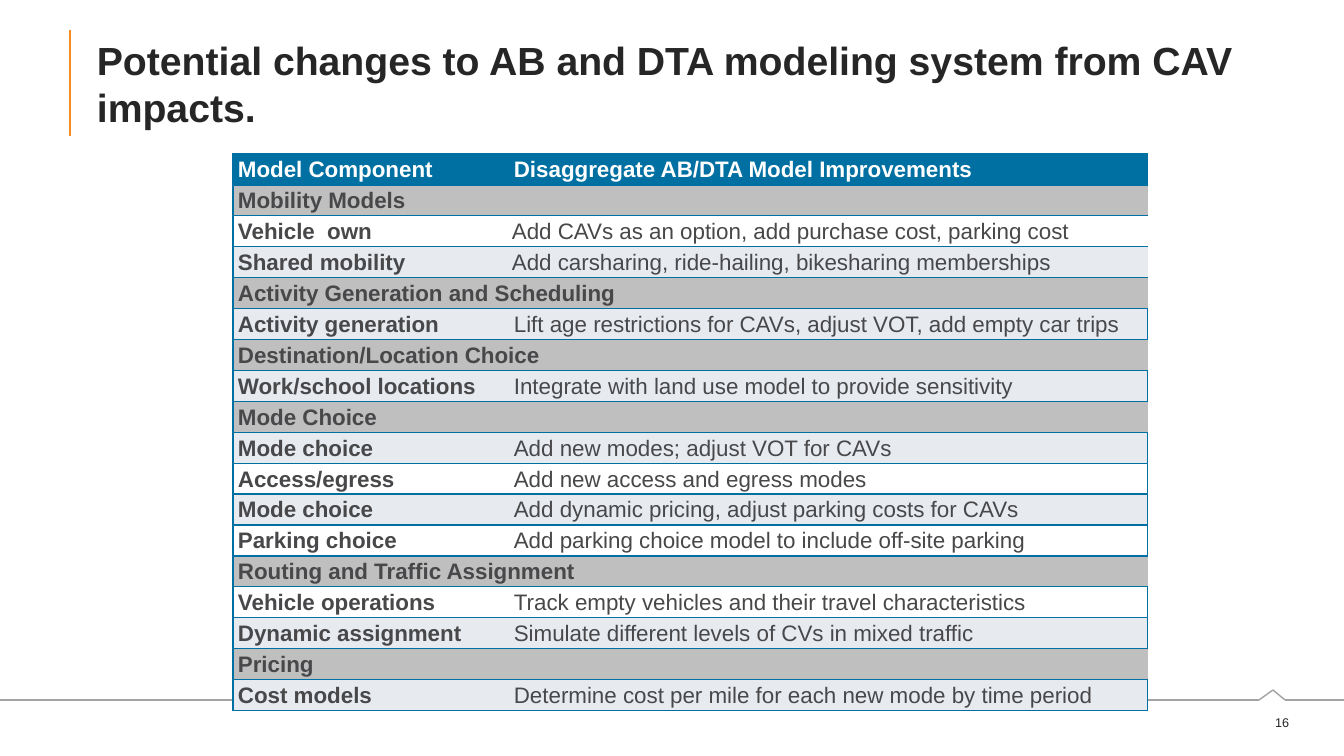
import pptx
import pptx.util
import pptx.dml.color
import pptx.enum.shapes
import pptx.enum.text
import pptx.oxml.ns
from lxml import etree

Pt = pptx.util.Pt
RGB = pptx.dml.color.RGBColor
Anchor = pptx.enum.text.MSO_ANCHOR
Align = pptx.enum.text.PP_ALIGN
qn = pptx.oxml.ns.qn

PX = 914400 / 100.8
ORANGE = RGB(0xF6, 0x8B, 0x1F)
RULE = RGB(0xA3, 0xA3, 0xA5)
DARK = RGB(0x26, 0x26, 0x26)
TEXT = RGB(0x48, 0x48, 0x4A)
BLUE = RGB(0x00, 0x6F, 0xA1)
GREY = RGB(0xBF, 0xBF, 0xBF)
PALE = RGB(0xE7, 0xEB, 0xF0)
WHITE = RGB(0xFF, 0xFF, 0xFF)


def px(*values):
    """Turn pixel lengths into a list of EMU."""
    return [round(v * PX) for v in values]


def style(para, text, size, color, bold):
    run = para.add_run()
    run.text = text
    for key, value in {"name": "Arial", "size": Pt(size), "bold": bold}.items():
        setattr(run.font, key, value)
    run.font.color.rgb = color


deck = pptx.Presentation()
deck.slide_width, deck.slide_height = px(1344, 756)
slide = deck.slides.add_slide(deck.slide_layouts[6])
shapes = slide.shapes

# Title bar and footer rule with its peak
lines = [((70, 30), (70, 136), ORANGE, 1.5)]
peak = [(0, 700), (1259, 700), (1273, 690), (1285, 700), (1344, 700)]
lines += [(a, b, RULE, 1) for a, b in zip(peak, peak[1:])]
for start, end, color, width in lines:
    line = shapes.add_connector(
        pptx.enum.shapes.MSO_CONNECTOR.STRAIGHT, *px(*start, *end))
    line.line.color.rgb = color
    line.line.width = Pt(width)
    etree.SubElement(line._element.spPr, qn("a:effectLst"))

# Title and page number
title = "Potential changes to AB and DTA modeling system from CAV impacts."
for text, place, size, bold, align in [
    (title, (87, 30, 1189, 106), 28, True, Align.LEFT),
    ("16", (1243, 710, 56, 25), 9, False, Align.RIGHT),
]:
    frame = shapes.add_textbox(*px(*place)).text_frame
    frame.word_wrap = True
    frame.vertical_anchor = Anchor.MIDDLE
    para = frame.paragraphs[0]
    para.alignment = align
    style(para, text, size, DARK, bold)

# Each row: fill, label, improvement; a section row has no improvement
rows = [
    (BLUE, "Model Component", "Disaggregate AB/DTA Model Improvements"),
    (GREY, "Mobility Models", ""),
    (WHITE, "Vehicle  own",
     "Add CAVs as an option, add purchase cost, parking cost"),
    (PALE, "Shared mobility",
     "Add carsharing, ride-hailing, bikesharing memberships"),
    (GREY, "Activity Generation and Scheduling", ""),
    (PALE, "Activity generation",
     "Lift age restrictions for CAVs, adjust VOT, add empty car trips"),
    (GREY, "Destination/Location Choice", ""),
    (PALE, "Work/school locations",
     "Integrate with land use model to provide sensitivity"),
    (GREY, "Mode Choice", ""),
    (PALE, "Mode choice", "Add new modes; adjust VOT for CAVs"),
    (WHITE, "Access/egress", "Add new access and egress modes"),
    (PALE, "Mode choice", "Add dynamic pricing, adjust parking costs for CAVs"),
    (WHITE, "Parking choice",
     "Add parking choice model to include off-site parking"),
    (GREY, "Routing and Traffic Assignment", ""),
    (WHITE, "Vehicle operations",
     "Track empty vehicles and their travel characteristics"),
    (PALE, "Dynamic assignment",
     "Simulate different levels of CVs in mixed traffic"),
    (GREY, "Pricing", ""),
    (PALE, "Cost models",
     "Determine cost per mile for each new mode by time period"),
]
early = (2, 3)  # rows whose improvement starts in the middle column
table = shapes.add_table(len(rows), 3, *px(233, 154, 915, 525)).table
table.first_row = table.horz_banding = False
for col, width in zip(table.columns, px(206, 70, 639)):
    col.width = width

side, indent = px(5, 68)
for r, (fill, label, change) in enumerate(rows):
    table.rows[r].height = px(525 / len(rows))[0]
    for c in range(3):
        cell = table.cell(r, c)
        cell.margin_left = cell.margin_right = side
        cell.margin_top = cell.margin_bottom = 0
        props = cell._tc.get_or_add_tcPr()
        drawn = {"L": c == 0, "R": c == 2, "T": True, "B": True}
        for edge, shown in drawn.items():
            border = etree.SubElement(props, qn("a:ln" + edge), w="12700")
            if shown:
                paint = etree.SubElement(border, qn("a:solidFill"))
                etree.SubElement(paint, qn("a:srgbClr"), val=str(BLUE))
            else:
                etree.SubElement(border, qn("a:noFill"))
        cell.fill.solid()
        cell.fill.fore_color.rgb = fill

    second = 1 if r in early else 2
    if not change:
        table.cell(r, 0).merge(table.cell(r, 2))
    elif r in early:
        table.cell(r, 1).merge(table.cell(r, 2))
    else:
        table.cell(r, 0).merge(table.cell(r, 1))
    color = WHITE if r == 0 else TEXT
    for c, text, bold in [(0, label, True), (second, change, r == 0)]:
        if text:
            para = table.cell(r, c).text_frame.paragraphs[0]
            para.line_spacing = 1.15
            style(para, text, 16, color, bold)
            if c == 1:
                para._p.get_or_add_pPr().set("marL", str(indent))

# Empty cells would otherwise force taller rows
for cell in table.iter_cells():
    if not cell.text_frame.text:
        cell.text_frame.paragraphs[0].font.size = Pt(16)

deck.save("out.pptx")
